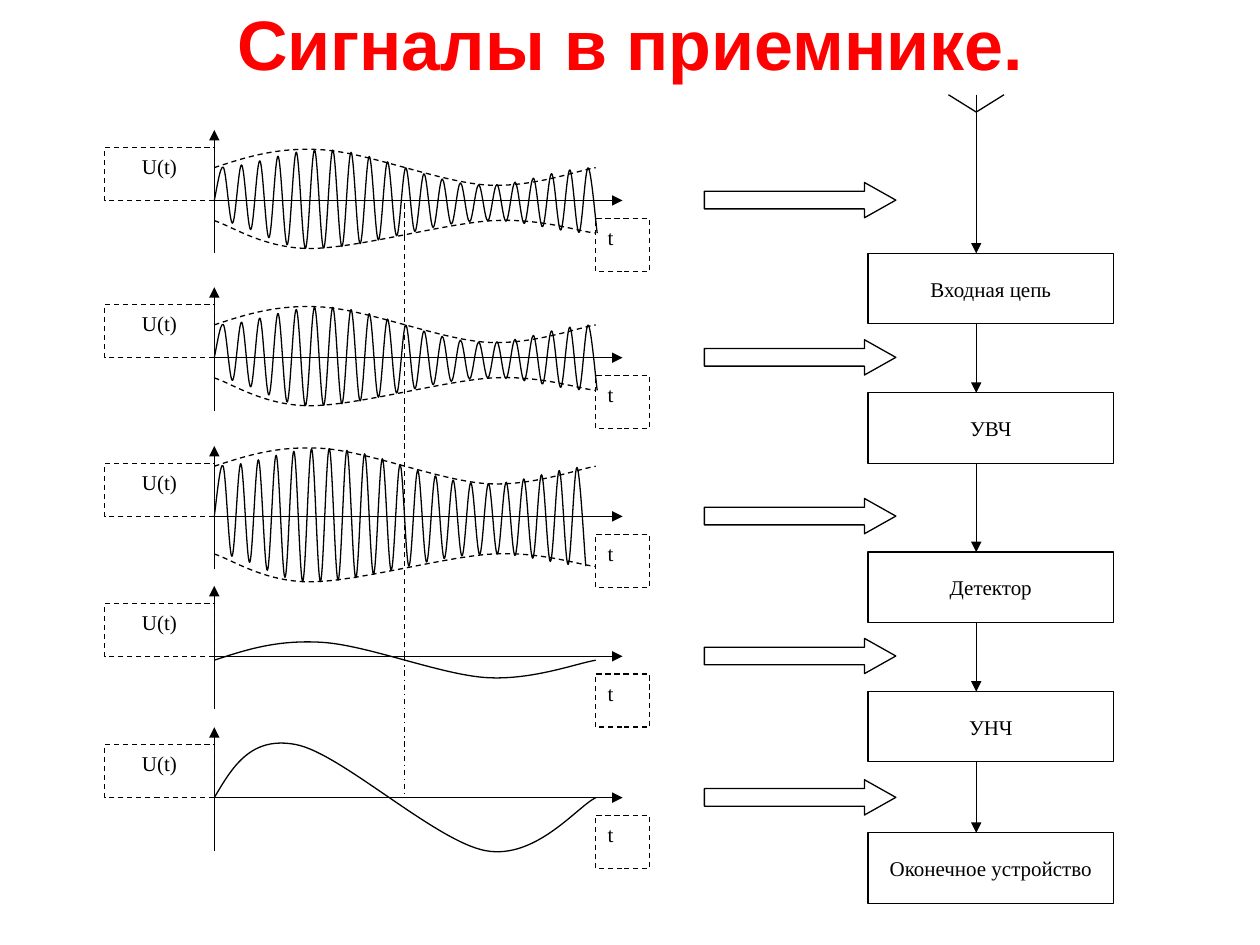
import math
import pptx
import pptx.util
from pptx.dml.color import RGBColor
from pptx.enum.dml import MSO_LINE
from pptx.enum.shapes import MSO_CONNECTOR, MSO_SHAPE
from pptx.enum.text import MSO_ANCHOR, PP_ALIGN
from pptx.oxml.ns import qn
from lxml import etree

Cm, Pt = pptx.util.Cm, pptx.util.Pt
INK = {"title": "FF0000", "line": "000000", "fill": "FFFFFF"}
DASH, DOT = MSO_LINE.DASH, MSO_LINE.DASH_DOT


def write(shape, text, size=12, font="Times New Roman", ink="line",
          bold=False, align=PP_ALIGN.CENTER, anchor=MSO_ANCHOR.MIDDLE):
    frame = shape.text_frame
    frame.word_wrap = True
    frame.vertical_anchor = anchor
    par = frame.paragraphs[0]
    par.alignment = align
    run = par.add_run()
    run.text = text
    run.font.size, run.font.name, run.font.bold = Pt(size), font, bold
    run.font.color.rgb = RGBColor.from_string(INK[ink])


def level(knots, x):
    """Height of an envelope at x, eased by a cosine between its knots."""
    for (x1, y1), (x2, y2) in zip(knots, knots[1:]):
        if x <= x2:
            part = (x - x1) / (x2 - x1)
            return y1 + (y2 - y1) * (1 - math.cos(math.pi * part)) / 2
    return knots[-1][1]


deck = pptx.Presentation()
deck.slide_width, deck.slide_height = Cm(25.4), Cm(19.05)
slide = deck.slides.add_slide(deck.slide_layouts[5])
shapes = slide.shapes
drawn = []  # shape, dash, arrowhead: outlined together at the end

# Title
title = shapes.title
title.left, title.top, title.width, title.height = Cm(1.27), Cm(0), Cm(22.86), Cm(1.7)
write(title, "Сигналы в приемнике.", size=40, font="Arial", ink="title", bold=True)

# Layout in cm: the time axis of each plot, the top of each stage block
axes = {"input": 4.04, "tuned": 7.21, "strong": 10.41, "sound": 13.23, "output": 16.08}
stages = {"Входная цепь": 5.11, "УВЧ": 7.92, "Детектор": 11.13,
          "УНЧ": 13.94, "Оконечное устройство": 16.79}
left, right = 4.32, 12.55   # ends of the time axes
feed, tall = 19.68, 1.42    # signal path, height of a stage block
mark = 8.15                 # vertical guide through all plots

# Axes, signal path, antenna and guide: x1, y1, x2, y2, dash, arrowhead
lines = []
for y in axes.values():
    lines.append((left, y + 1.07, left, y - 1.42, None, True))
    lines.append((left, y, right, y, None, True))
start = 1.91
for top in stages.values():
    lines.append((feed, start, feed, top, None, True))
    start = top + tall
for side in (-0.56, 0.56):
    lines.append((feed, 2.26, feed + side, 1.91, None, False))
lines += [(mark, axes["sound"], mark, axes["output"], DOT, False),
          (mark, axes["sound"], mark, 4.75, DASH, False),
          (mark, 4.75, mark, axes["input"], DASH, False)]
for x1, y1, x2, y2, dash, head in lines:
    wire = shapes.add_connector(MSO_CONNECTOR.STRAIGHT, Cm(x1), Cm(y1), Cm(x2), Cm(y2))
    etree.SubElement(wire._element.spPr, qn("a:effectLst"))
    drawn.append((wire, dash, head))

# Low-frequency signals; the upper envelope has the shape of the sound
crest = [(left, 0.36), (6.5, 0), (9.8, 0.71), (12.01, 0.36)]
trough = [(left, 0.05), (6.25, 0.61), (9.93, 0.05), (11.99, 0.3)]
swing = [(left, 0), (5.97, -1.07), (9.8, 1.07), (12.01, 0)]

# Curves: points, dash, whether the first handle is long
curves = [([(x, y + axes["sound"] - 0.28) for x, y in crest], None, True),
          ([(x, y + axes["output"]) for x, y in swing], None, True)]

# Modulated signals: the carrier swings from one envelope to the other
turns = 42
bands = {"input": (1.02, 0.36, 12.04), "tuned": (1.02, 0.36, 12.04),
         "strong": (1.37, 0.71, 11.81)}
for name, (rise, drop, end) in bands.items():
    axis = axes[name]
    upper = [(x, axis - rise + y) for x, y in crest]
    lower = [(x, axis + drop + y) for x, y in trough]
    carrier = [(left, axis)]
    for turn in range(1, turns + 1):
        x = left + (end - left) * turn / turns
        carrier.append((x, level(upper if turn % 2 else lower, x)))
    curves += [(carrier, None, False), (upper, DASH, True), (lower, DASH, False)]

for pts, dash, easy in curves:
    # Each handle runs parallel to the chord between the neighbouring points
    ends = [pts[0]] + pts + [pts[-1]]
    nodes = [pts[0]]
    for (ax, ay), (bx, by), (cx, cy), (dx, dy) in zip(ends, ends[1:], ends[2:], ends[3:]):
        first = (bx + (cx - ax) / 6, by + (cy - ay) / 6)
        second = (cx - (dx - bx) / 6, cy - (dy - by) / 6)
        if easy and len(nodes) == 1:
            first = ((bx + second[0]) / 2, (by + second[1]) / 2)
        nodes += [first, second, (cx, cy)]
    spots = [(Cm(x), Cm(y)) for x, y in nodes]
    pen = shapes.build_freeform(*spots[0])
    pen.add_line_segments(spots[1:], close=False)
    wave = pen.convert_to_shape()
    wave.shadow.inherit = False
    wave.fill.background()
    drawn.append((wave, dash, False))
    # Every three straight segments become one Bezier segment
    steps = list(wave._element.iter(qn("a:lnTo")))
    track = steps[0].getparent()
    for i in range(0, len(steps), 3):
        bend = etree.SubElement(track, qn("a:cubicBezTo"))
        for step in steps[i:i + 3]:
            bend.append(step[0])
            track.remove(step)

# Stage blocks, then the arrow and the axis labels of each plot:
# kind, x, y, width, height, text, dash, filled, text format
RECT, ARROW = MSO_SHAPE.RECTANGLE, MSO_SHAPE.RIGHT_ARROW
boxes = [(RECT, 17.5, top, 4.95, tall, name, None, True, {})
         for name, top in stages.items()]
high = {"anchor": MSO_ANCHOR.TOP}
corner = {"anchor": MSO_ANCHOR.TOP, "align": PP_ALIGN.LEFT}
for y in axes.values():
    boxes += [(ARROW, 14.2, y - 0.36, 3.86, 0.71, "", None, True, {}),
              (RECT, 2.11, y - 1.07, 2.21, 1.07, "U(t)", DASH, True, high),
              (RECT, 12, y + 0.36, 1.09, 1.07, "t", DASH, False, corner)]
for kind, x, y, wide, deep, text, dash, full, form in boxes:
    box = shapes.add_shape(kind, Cm(x), Cm(y), Cm(wide), Cm(deep))
    box.shadow.inherit = False
    if kind == ARROW:
        box.adjustments[1] = 0.89
    if full:
        box.fill.solid()
        box.fill.fore_color.rgb = RGBColor.from_string(INK["fill"])
        tint = box._element.spPr.find(qn("a:solidFill"))[0]
        etree.SubElement(tint, qn("a:alpha"), val="34000")
    else:
        box.fill.background()
    if text:
        write(box, text, **form)
    drawn.append((box, dash, False))

# Outlines
for shape, dash, head in drawn:
    shape.line.color.rgb = RGBColor.from_string(INK["line"])
    shape.line.width = Pt(0.75)
    if dash:
        shape.line.dash_style = dash
    if head:
        edge = shape._element.spPr.find(qn("a:ln"))
        etree.SubElement(edge, qn("a:tailEnd"), type="triangle")

deck.save("out.pptx")
